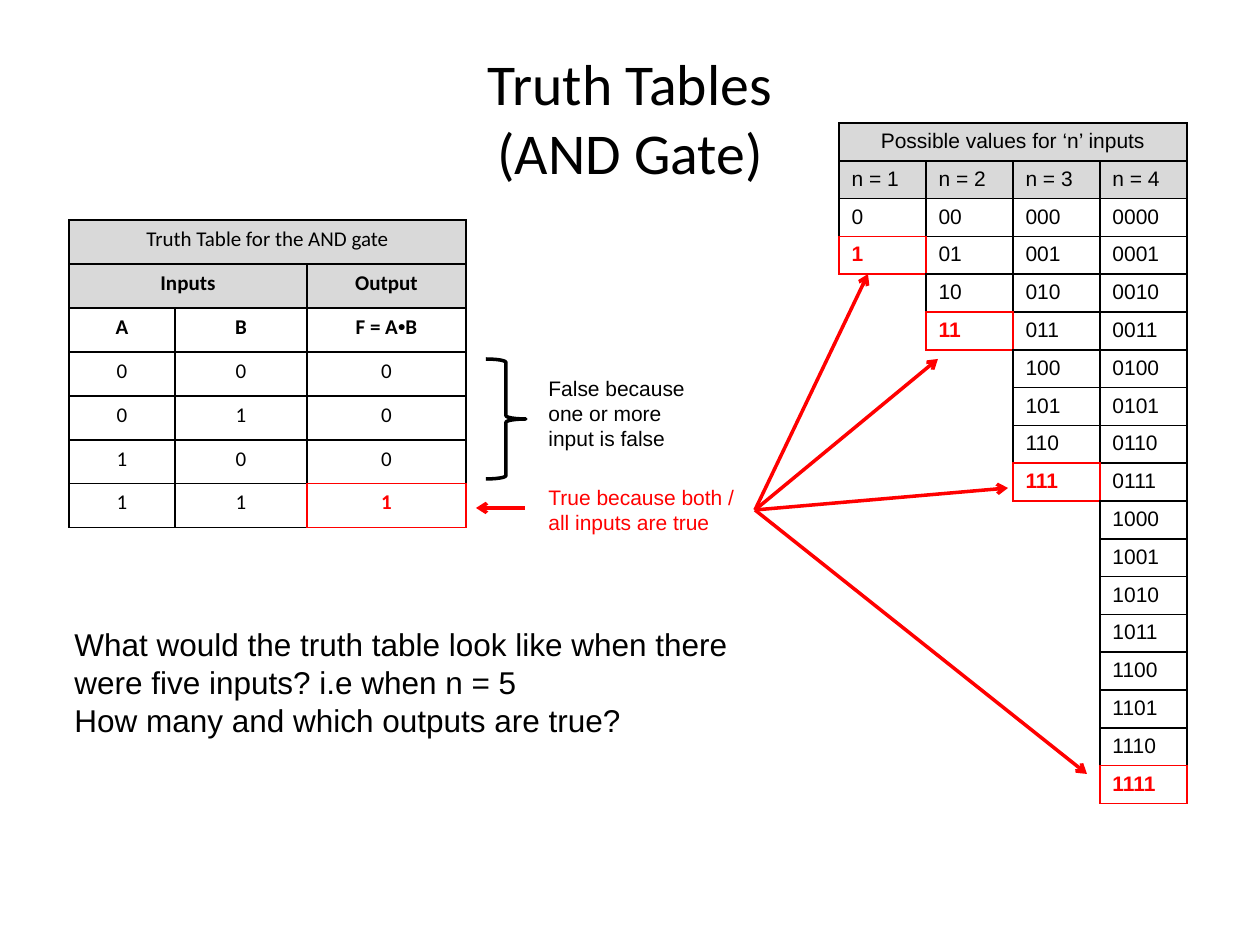
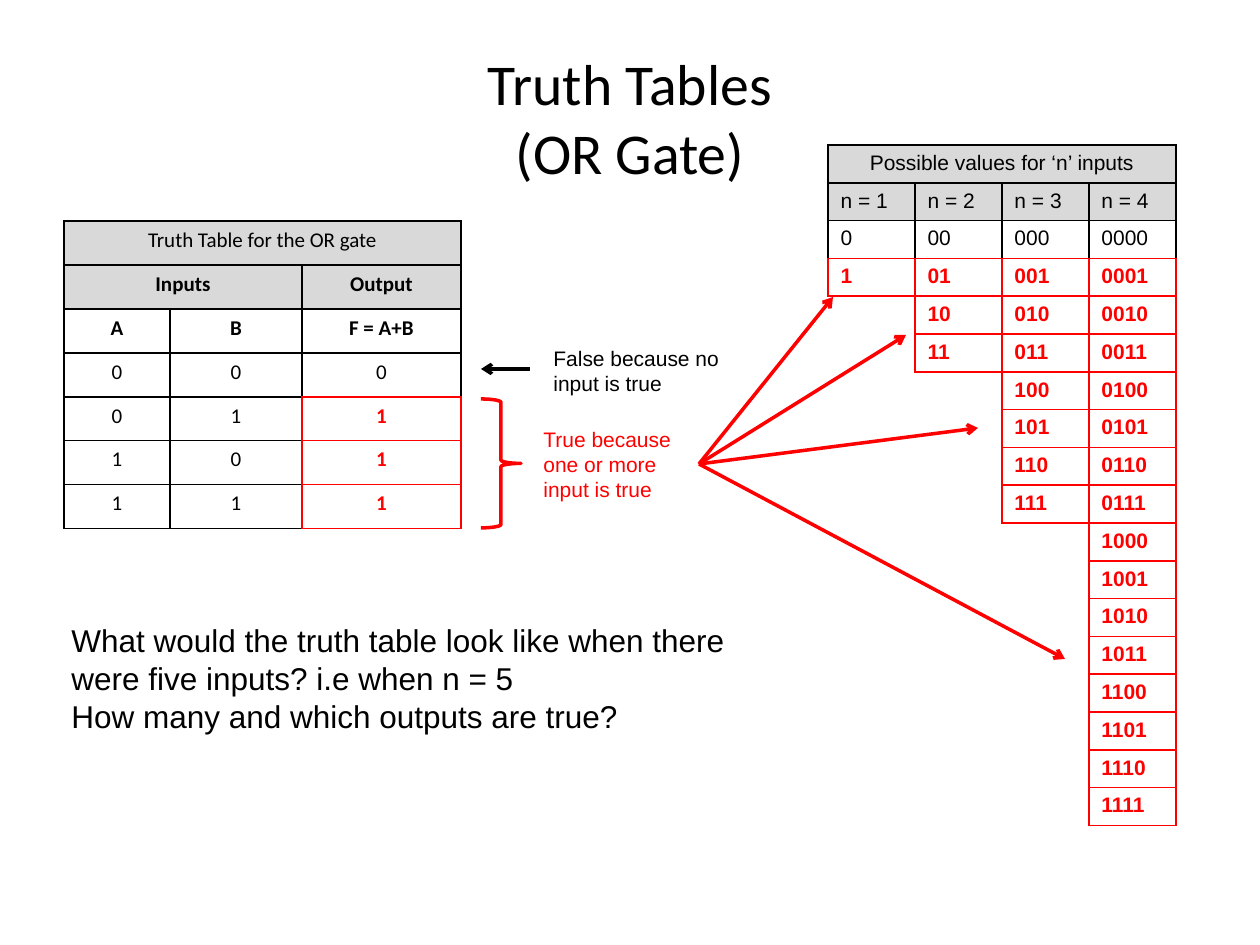
from itertools import product

from lxml import etree
from pptx import Presentation
from pptx.dml.color import RGBColor
from pptx.enum.shapes import MSO_CONNECTOR, MSO_SHAPE
from pptx.enum.text import MSO_ANCHOR, MSO_AUTO_SIZE, PP_ALIGN
from pptx.oxml.ns import qn
from pptx.util import Emu, Pt

LEFT, CENTER = PP_ALIGN.LEFT, PP_ALIGN.CENTER
MIDDLE = MSO_ANCHOR.MIDDLE
NO_FIT, GROW = MSO_AUTO_SIZE.NONE, MSO_AUTO_SIZE.SHAPE_TO_FIT_TEXT
STRAIGHT = MSO_CONNECTOR.STRAIGHT
RIGHT_BRACE = MSO_SHAPE.RIGHT_BRACE
TITLE_ONLY = 5

BLACK, RED, GREY = "000000", "FF0000", "D9D9D9"
SANS, HEADING = "Arial", "Calibri"
EMU_PER_PX = 914400 / 126
SIDES = {"lnL": (0, -1), "lnR": (0, 1), "lnT": (-1, 0), "lnB": (1, 0)}
HEADER_ROWS = 2
MAX_INPUTS = 4


def px(length):
    """Turn pixels into EMU."""
    return Emu(round(length * EMU_PER_PX))


def rgb(value):
    """Turn a hex string into a colour."""
    return RGBColor.from_string(value)


def format_run(run, size, font, color, bold=False):
    """Set the character format of one run."""
    run.font.size = Pt(size)
    run.font.name = font
    run.font.bold = bold
    run.font.color.rgb = rgb(color)


def add_text(shapes, box, lines, size, color=BLACK):
    """Add a wrapping text box with one paragraph for each line."""
    shape = shapes.add_textbox(*map(px, box))
    frame = shape.text_frame
    frame.word_wrap = True
    frame.auto_size = GROW
    frame.text = "\n".join(lines)
    for paragraph in frame.paragraphs:
        for run in paragraph.runs:
            format_run(run, size, SANS, color)


def add_arrow(shapes, start, end, color):
    """Add a straight line with an open arrowhead at its end."""
    connector = shapes.add_connector(STRAIGHT, *map(px, start + end))
    connector.line.color.rgb = rgb(color)
    connector.line.width = Pt(2)
    properties = connector._element.spPr
    line = properties.find(qn("a:ln"))
    etree.SubElement(line, qn("a:tailEnd"), type="arrow")
    etree.SubElement(properties, qn("a:effectLst"))


def add_title(slide, text):
    """Fill the title placeholder."""
    title = slide.shapes.title
    title.left, title.top, title.width, title.height = map(px, (63, 38, 1134, 158))
    frame = title.text_frame
    frame.text = text
    frame.auto_size = NO_FIT
    frame.vertical_anchor = MIDDLE
    paragraph = frame.paragraphs[0]
    paragraph.alignment = CENTER
    for run in paragraph.runs:
        format_run(run, 33, HEADING, BLACK)


def set_borders(cell, colors):
    """Draw the four sides of a cell; None leaves a side open."""
    properties = cell._tc.get_or_add_tcPr()
    for side, color in colors.items():
        line = etree.SubElement(properties, qn(f"a:{side}"), w=str(Pt(1)))
        if color:
            fill = etree.SubElement(line, qn("a:solidFill"))
            etree.SubElement(fill, qn("a:srgbClr"), val=color)
        else:
            etree.SubElement(line, qn("a:noFill"))


def write_cell(cell, text, font, color, bold, alignment):
    """Write a cell, with any dot operator in Arial."""
    paragraph = cell.text_frame.paragraphs[0]
    paragraph.alignment = alignment
    if not text:
        paragraph._p.get_or_add_endParaRPr().set("sz", "1200")
        return
    head, dot, tail = text.partition("•")
    paragraph.text = head
    if dot:
        paragraph.add_run().text = dot
        paragraph.add_run().text = tail
    for run in paragraph.runs:
        format_run(run, 12, SANS if run.text == "•" else font, color, bold)


def add_grid(slide, box, texts, merges, true_cells, font, bold_rows, centered_rows):
    """Add a table whose true cells are red; None marks an open cell."""
    rows, columns = len(texts), len(texts[0])
    frame = slide.shapes.add_table(rows, columns, *map(px, box))
    table = frame.table
    table.first_row = table.horz_banding = False
    for first, last in merges:
        table.cell(*first).merge(table.cell(*last))

    def is_drawn(row, column):
        return (0 <= row < rows and 0 <= column < columns
                and texts[row][column] is not None)

    for row, column in product(range(rows), range(columns)):
        cell = table.cell(row, column)
        is_true = (row, column) in true_cells
        borders = {}
        for side, (down, right) in SIDES.items():
            neighbour = (row + down, column + right)
            color = RED if is_true or neighbour in true_cells else BLACK
            visible = is_drawn(row, column) or is_drawn(*neighbour)
            borders[side] = color if visible else None
        set_borders(cell, borders)
        if row < HEADER_ROWS:
            cell.fill.solid()
            cell.fill.fore_color.rgb = rgb(GREY)
        else:
            cell.fill.background()
        write_cell(cell, texts[row][column], font, RED if is_true else BLACK,
                   is_true or row in bold_rows,
                   CENTER if row in centered_rows else LEFT)
    return table


def add_truth_table(slide, origin, name, formula, gate):
    """Add the two-input truth table of a gate."""
    texts = [[f"Truth Table for the {name} gate", "", ""],
             ["Inputs", "", "Output"],
             ["A", "B", formula]]
    true_cells = set()
    for bits in product((0, 1), repeat=2):
        if gate(bits):
            true_cells.add((len(texts), 2))
        texts.append([str(int(value)) for value in (*bits, gate(bits))])
    merges = [((0, 0), (0, 2)), ((1, 0), (1, 1))]
    table = add_grid(slide, (*origin, 397, 308), texts, merges, true_cells,
                     HEADING, (1, 2), range(len(texts)))
    for column, width in zip(table.columns, (106, 132, 159)):
        column.width = px(width)


def add_input_values(slide, origin, gate):
    """Add the table of all input values for one to four inputs."""
    rows = HEADER_ROWS + 2 ** MAX_INPUTS
    texts = [[None] * MAX_INPUTS for _ in range(rows)]
    texts[0] = ["Possible values for ‘n’ inputs"] + [""] * (MAX_INPUTS - 1)
    merges = [((0, 0), (0, MAX_INPUTS - 1))]
    true_cells = set()
    for column in range(MAX_INPUTS):
        count = column + 1
        texts[1][column] = f"n = {count}"
        for row, bits in enumerate(product((0, 1), repeat=count), HEADER_ROWS):
            texts[row][column] = "".join(map(str, bits))
            if gate(bits):
                true_cells.add((row, column))
        first_open = HEADER_ROWS + 2 ** count
        if first_open < rows:
            merges.append(((first_open, column), (rows - 1, column)))
    add_grid(slide, (*origin, 348, 681), texts, merges, true_cells, SANS, (), (0,))


def add_brace_note(shapes, box, text, color, text_offset):
    """Add a right brace with a note beside it."""
    left, top, _, _ = box
    brace = shapes.add_shape(RIGHT_BRACE, *map(px, box))
    brace.shadow.inherit = False
    brace.fill.background()
    brace.line.color.rgb = rgb(color)
    brace.line.width = Pt(2)
    add_text(shapes, (left + 50, top + text_offset, 169, 89), [text], 12, color)


def add_arrow_note(shapes, tip, text, color):
    """Add a left-pointing arrow with a note beside it."""
    left, middle = tip
    add_arrow(shapes, (left + 49, middle), tip, color)
    add_text(shapes, (left + 60, middle - 30, 218, 64), [text], 12, color)


def add_question(slide, origin):
    """Add the closing question."""
    add_text(slide.shapes, (*origin, 735, 127), [
        "What would the truth table look like when there were five inputs? "
        "i.e when n = 5",
        "How many and which outputs are true?"], 18)


def add_arrow_fan(slide, start, ends):
    """Add red arrows from one point to the true input values."""
    shapes = slide.shapes.add_group_shape().shapes
    for end in ends:
        add_arrow(shapes, start, end, RED)


def add_gate_slide(presentation, name, formula, gate, values_at, table_at):
    """Add a slide with the title and both tables of a gate."""
    slide = presentation.slides.add_slide(presentation.slide_layouts[TITLE_ONLY])
    add_title(slide, f"Truth Tables\v({name} Gate)")
    add_input_values(slide, values_at, gate)
    add_truth_table(slide, table_at, name, formula, gate)
    return slide


def build_and_slide(presentation):
    """Build the AND gate slide."""
    slide = add_gate_slide(presentation, "AND", "F = A•B", all, (839, 123), (69, 220))
    notes = slide.shapes.add_group_shape().shapes
    add_brace_note(notes, (486, 359, 40, 120),
                   "False because one or more input is false", BLACK, 10)
    add_arrow_note(notes, (476, 508), "True because both / all inputs are true", RED)
    add_question(slide, (62, 619))
    add_arrow_fan(slide, (755, 510),
                  [(868, 274), (938, 359), (1008, 488), (1087, 774)])


def build_or_slide(presentation):
    """Build the OR gate slide."""
    slide = add_gate_slide(presentation, "OR", "F = A+B", any, (828, 145), (64, 221))
    notes = slide.shapes.add_group_shape().shapes
    add_brace_note(notes, (481, 399, 40, 129),
                   "True because one or more input is true", RED, 21)
    add_arrow_note(notes, (481, 369), "False because no input is true", BLACK)
    add_question(slide, (59, 615))
    add_arrow_fan(slide, (699, 464),
                  [(833, 297), (906, 335), (978, 428), (1065, 659)])


def main():
    """Build and save the presentation."""
    presentation = Presentation()
    presentation.slide_width, presentation.slide_height = px(1260), px(945)
    build_and_slide(presentation)
    build_or_slide(presentation)
    presentation.save("out.pptx")


if __name__ == "__main__":
    main()
